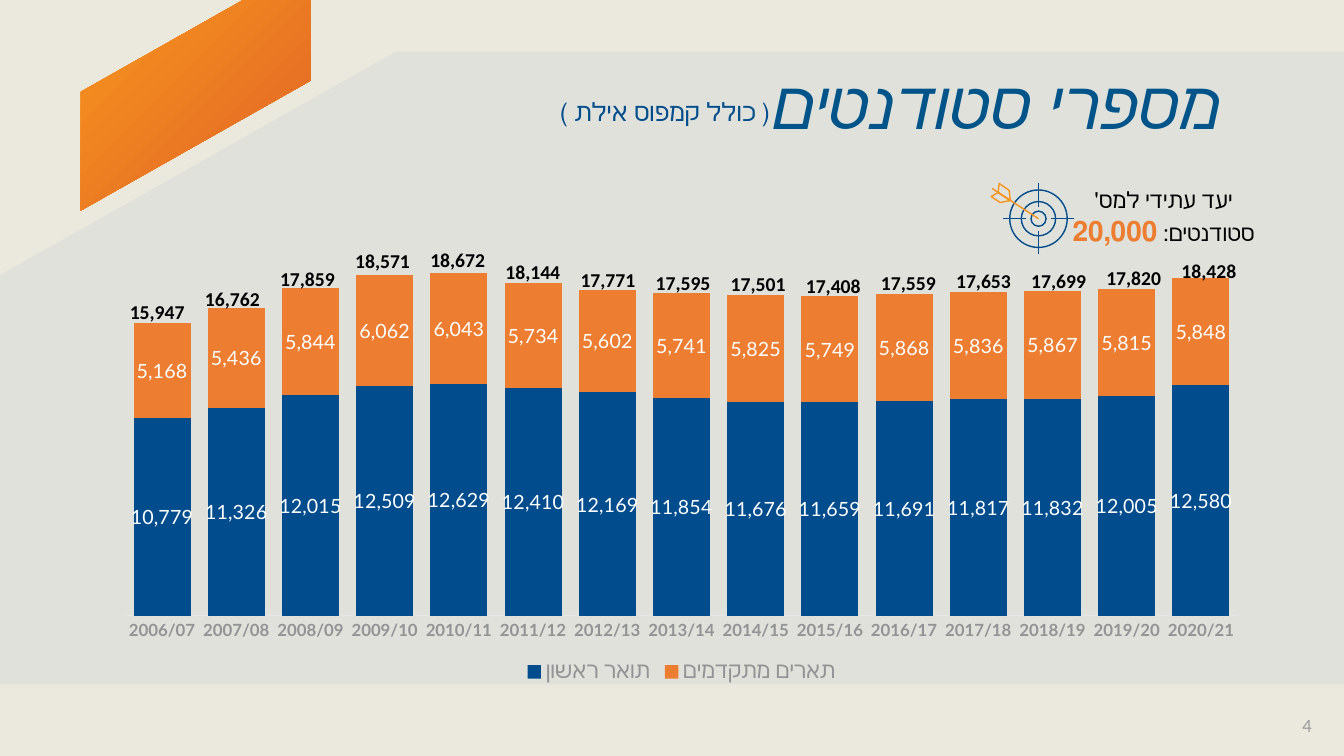
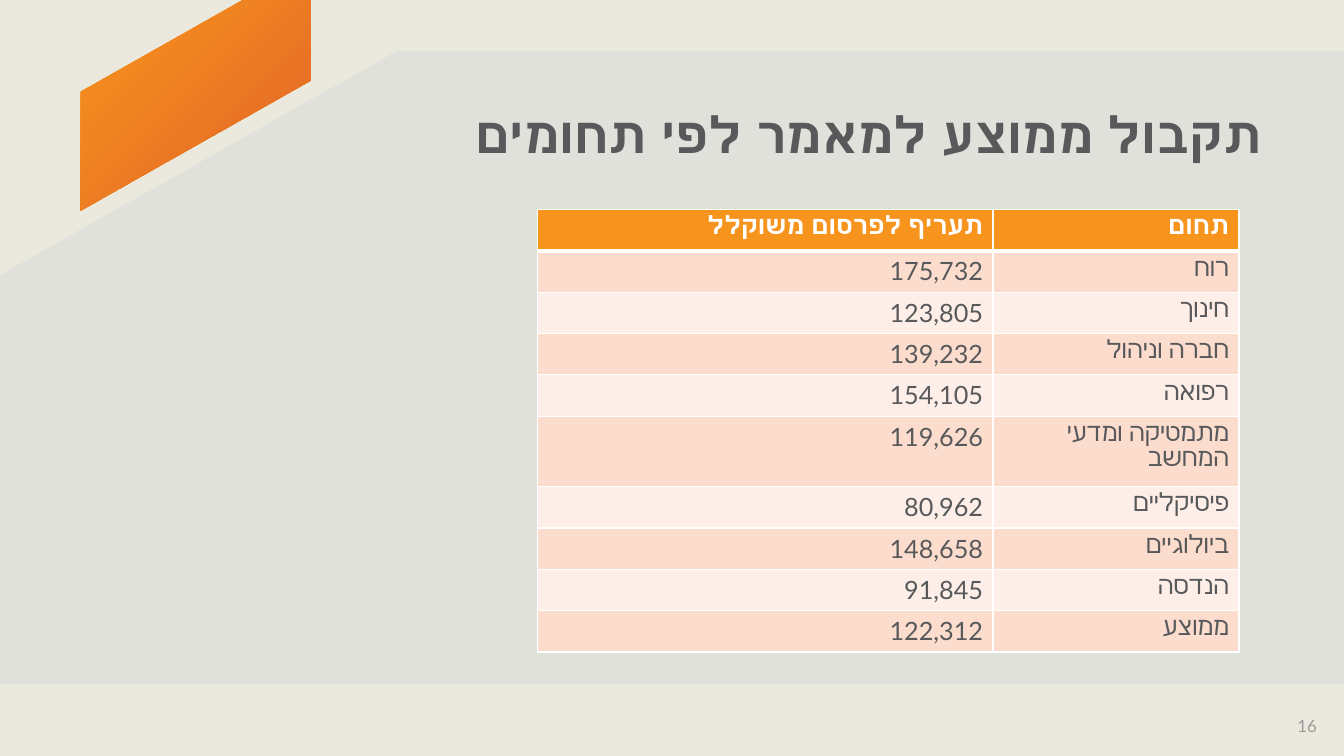
from pptx import Presentation
from pptx import util as u
from pptx.chart import data as cd
from pptx.dml.color import RGBColor
from pptx.enum import chart as ch, shapes, text
from pptx.oxml import parse_xml
from pptx.oxml.ns import nsdecls, qn
from lxml import etree

C = {"page": "EBE9DD", "panel": "CFD6DA", "orange": "F7941E", "rust": "E16327",
     "blue": "004C8C", "title": "005489", "advanced": "ED7D31", "ink": "58595B",
     "muted": "929395", "number": "9A9B9B", "axis": "E6E6E7", "black": "000000",
     "white": "FFFFFF", "band": "FCDCCD", "light": "FDEEE8"}
AL = {"l": text.PP_ALIGN.LEFT, "c": text.PP_ALIGN.CENTER, "r": text.PP_ALIGN.RIGHT}
MIDDLE, TOP = text.MSO_ANCHOR.MIDDLE, text.MSO_ANCHOR.TOP
YEARS = [f"{y}/{(y + 1) % 100:02d}" for y in range(2006, 2021)]
FIRST = [10779, 11326, 12015, 12509, 12629, 12410, 12169, 11854, 11676, 11659,
         11691, 11817, 11832, 12005, 12580]
ADVANCED = [5168, 5436, 5844, 6062, 6043, 5734, 5602, 5741, 5825, 5749,
            5868, 5836, 5867, 5815, 5848]
TOTAL_TOPS = [2.93, 2.8, 2.6, 2.42, 2.41, 2.53, 2.61, 2.64, 2.65, 2.67,
              2.64, 2.62, 2.62, 2.59, 2.52]
RATES = [("תעריף לפרסום משוקלל", "תחום"), ("175,732", "רוח"), ("123,805", "חינוך"),
         ("139,232", "חברה וניהול"), ("154,105", "רפואה"),
         ("119,626", "מתמטיקה ומדעי המחשב"), ("80,962", "פיסיקליים"),
         ("148,658", "ביולוגיים"), ("91,845", "הנדסה"), ("122,312", "ממוצע")]


def rgb(name):
    """Return the palette colour."""
    return RGBColor.from_string(C[name])


def box(x, y, w, h):
    """Return a box in inches as lengths."""
    return [u.Inches(v) for v in (x, y, w, h)]


def set_font(f, size, color, font="Calibri", bold=False, italic=False):
    """Format a font."""
    f.size, f.name, f.bold, f.italic = u.Pt(size), font, bold, italic
    f.color.rgb = rgb(color)


def write(tf, runs, al="c", rtl=False, anchor=TOP, wrap=True, spacing=None, **fmt):
    """Fill a text frame with one paragraph of text or (text, format) runs."""
    tf.word_wrap, tf.auto_size, tf.vertical_anchor = wrap, text.MSO_AUTO_SIZE.NONE, anchor
    p = tf.paragraphs[0]
    p.alignment = AL[al]
    if spacing:
        p.line_spacing = spacing
    if rtl:
        p._p.get_or_add_pPr().set("rtl", "1")
    for words, extra in [(runs, {})] if isinstance(runs, str) else runs:
        r = p.add_run()
        r.text = words
        set_font(r.font, **{**fmt, **extra})


def label(s, at, runs, **fmt):
    """Add a text box."""
    write(s.shapes.add_textbox(*box(*at)).text_frame, runs, **fmt)


def outline(sps, points):
    """Build a closed freeform from points in inches."""
    pts = [(u.Inches(x), u.Inches(y)) for x, y in points]
    fb = sps.build_freeform(*pts[0], scale=1.0)
    fb.add_line_segments(pts[1:], close=True)
    sp = fb.convert_to_shape()
    sp.shadow.inherit = False
    return sp


def stroke(sp, color):
    """Give an unfilled shape a thin line."""
    sp.shadow.inherit = False
    sp.fill.background()
    sp.line.color.rgb, sp.line.width = rgb(color), u.Pt(1)


def line(sps, x1, y1, x2, y2, color):
    """Add a thin straight line."""
    cn = sps.add_connector(shapes.MSO_CONNECTOR.STRAIGHT,
                           *[u.Inches(v) for v in (x1, y1, x2, y2)])
    cn.line.color.rgb, cn.line.width = rgb(color), u.Pt(1)
    etree.SubElement(cn._element.spPr, qn("a:effectLst"))


def base_slide(prs, number, title, at, **fmt):
    """Add a slide with the shared backdrop, title and number."""
    s = prs.slides.add_slide(prs.slide_layouts[5])
    s.background.fill.solid()
    s.background.fill.fore_color.rgb = rgb("page")
    panel = outline(s.shapes, [(13.33, 0.51), (13.33, 6.79), (0, 6.79), (0, 2.73), (3.93, 0.51)])
    panel.fill.solid()
    panel.fill.fore_color.rgb = rgb("panel")
    panel.line.fill.background()
    clr = panel._element.spPr.find(".//" + qn("a:srgbClr"))
    etree.SubElement(clr, qn("a:alpha")).set("val", "38000")
    ribbon = outline(s.shapes, [(2.41, 0), (3.08, 0), (3.08, 0.8), (0.8, 2.09), (0.8, 0.91)])
    ribbon.fill.gradient()
    ribbon.fill.gradient_angle = 315
    for stop, color in zip(ribbon.fill.gradient_stops, ("orange", "rust")):
        stop.color.rgb = rgb(color)
    ribbon.line.fill.background()
    t = s.shapes.title
    t.left, t.top, t.width, t.height = box(*at)
    t.element.getparent().append(t.element)
    write(t.text_frame, title, al="r", rtl=True, **fmt)
    label(s, (12.6, 7, 0.73, 0.4), str(number), anchor=MIDDLE,
          size=12, color="number", font="Lato")
    return s


def students_chart(s, at):
    """Add the stacked columns of students by degree."""
    data = cd.CategoryChartData(number_format="#,##0")
    data.categories = YEARS
    data.add_series("תואר ראשון", FIRST)
    data.add_series("תארים מתקדמים", ADVANCED)
    c = s.shapes.add_chart(ch.XL_CHART_TYPE.COLUMN_STACKED, *box(*at), data).chart
    set_font(c.font, 10, "ink", "Lato")
    c.has_title = False
    c.has_legend = True
    c.legend.position = ch.XL_LEGEND_POSITION.BOTTOM
    c.legend.include_in_layout = False
    set_font(c.legend.font, 16, "muted", "Lato")
    va, ca = c.value_axis, c.category_axis
    va.minimum_scale, va.maximum_scale = 0, 20000
    va.has_major_gridlines = va.visible = False
    ca.major_tick_mark = ch.XL_TICK_MARK.NONE
    ca.format.line.color.rgb, ca.format.line.width = rgb("axis"), u.Pt(0.75)
    set_font(ca.tick_labels.font, 12, "muted", "Lato", bold=True)
    plot = c.plots[0]
    plot.gap_width, plot.overlap, plot.vary_by_categories = 30, 100, False
    for series, color in zip(plot.series, ("blue", "advanced")):
        series.format.fill.solid()
        series.format.fill.fore_color.rgb = rgb(color)
        dl = series.data_labels
        dl.show_value, dl.position = True, ch.XL_LABEL_POSITION.CENTER
        dl.number_format, dl.number_format_is_linked = "#,##0", False
        set_font(dl.font, 14, "white", "Lato")
    area = c._chartSpace.find(".//" + qn("c:plotArea"))
    for old in area.findall(qn("c:layout")):
        area.remove(old)
    edges = "".join(f'<c:{k} val="{v}"/>' for k, v in
                    (("layoutTarget", "inner"), ("xMode", "edge"), ("yMode", "edge"),
                     ("x", 0.02), ("y", 0.02), ("w", 0.96), ("h", 0.82)))
    area.insert(0, parse_xml(f'<c:layout {nsdecls("c")}><c:manualLayout>{edges}'
                             '</c:manualLayout></c:layout>'))


def totals(s, x, w, pitch):
    """Write the total above each column."""
    for i, (a, b, top) in enumerate(zip(FIRST, ADVANCED, TOTAL_TOPS)):
        label(s, (x + i * pitch, top, w, 0.32), f"{a + b:,}", wrap=False,
              size=14, color="black", bold=True)


def target_icon(s, x, y):
    """Draw a target with an arrow, from its top left corner."""
    sps = s.shapes.add_group_shape().shapes
    cx, cy = x + 0.48, y + 0.36
    for d in (0.57, 0.34, 0.15):
        stroke(sps.add_shape(shapes.MSO_SHAPE.OVAL, *box(cx - d / 2, cy - d / 2, d, d)), "blue")
    for dx, dy in ((0, -1), (0, 1), (1, 0), (-1, 0)):
        line(sps, cx + 0.12 * dx, cy + 0.12 * dy, cx + 0.35 * dx, cy + 0.35 * dy, "blue")
    for feather in ([(0.2, 0.18), (0.08, 0.1), (0.09, 0.01), (0.19, 0.08)],
                    [(0.1, 0.2), (0.01, 0.14), (0.08, 0.1), (0.2, 0.18)]):
        stroke(outline(sps, [(x + dx, y + dy) for dx, dy in feather]), "orange")
    line(sps, x + 0.02, y + 0.06, cx, cy, "orange")


def cell_borders(cell, bottom):
    """Draw white borders around a cell."""
    pr = cell._tc.get_or_add_tcPr()
    for i, (side, pt) in enumerate((("L", 1), ("R", 1), ("T", 1), ("B", bottom))):
        pr.insert(i, parse_xml(
            f'<a:ln{side} {nsdecls("a")} w="{pt * 12700}"><a:solidFill>'
            f'<a:srgbClr val="{C["white"]}"/></a:solidFill></a:ln{side}>'))


def rates_table(s, x, y):
    """Add the table of rates by field."""
    widths, heights = (4.52, 2.44), [0.7 if i == 5 else 0.41 for i in range(len(RATES))]
    t = s.shapes.add_table(len(RATES), 2, *box(x, y, sum(widths), sum(heights))).table
    t.horz_banding = False
    for col, w in zip(t.columns, widths):
        col.width = u.Inches(w)
    for i, (row, h) in enumerate(zip(t.rows, heights)):
        row.height = u.Inches(h)
        head = i == 0
        for cell, words in zip(row.cells, RATES[i]):
            cell.fill.solid()
            cell.fill.fore_color.rgb = rgb("orange" if head else "band" if i % 2 else "light")
            cell_borders(cell, 3 if head else 1)
            p = cell.text_frame.paragraphs[0]
            p.alignment = AL["r"]
            r = p.add_run()
            r.text = words
            set_font(r.font, 18, "white" if head else "ink", "Lato", bold=head)


def students_slide(prs):
    """Build the slide of student numbers."""
    s = base_slide(prs, 4, "מספרי סטודנטים", (6.68, 0.57, 5.49, 0.91),
                   size=48, color="title", italic=True)
    label(s, (4.59, 0.91, 3.15, 0.4), "( כולל קמפוס אילת )", al="r", rtl=True,
          size=18, color="blue")
    students_chart(s, (1.01, 2.38, 11.5, 4.44))
    totals(s, 1.16, 0.8, 0.745)
    label(s, (10.49, 1.8, 2.1, 0.71),
          [("יעד עתידי למס' סטודנטים: ", {}),
           ("20,000", {"size": 20, "color": "advanced", "bold": True})],
          rtl=True, size=16, color="black")
    target_icon(s, 9.82, 1.81)


def rates_slide(prs):
    """Build the slide of average rates."""
    s = base_slide(prs, 16, "תקבול ממוצע למאמר לפי תחומים", (0.88, 0.94, 11.73, 0.85),
                   anchor=MIDDLE, spacing=0.9, size=36, color="ink", font="Lato", bold=True)
    rates_table(s, 5.33, 2.08)


def main():
    """Build and save the presentation."""
    prs = Presentation()
    prs.slide_width, prs.slide_height = u.Inches(13.33), u.Inches(7.5)
    students_slide(prs)
    rates_slide(prs)
    prs.save("out.pptx")


if __name__ == "__main__":
    main()
